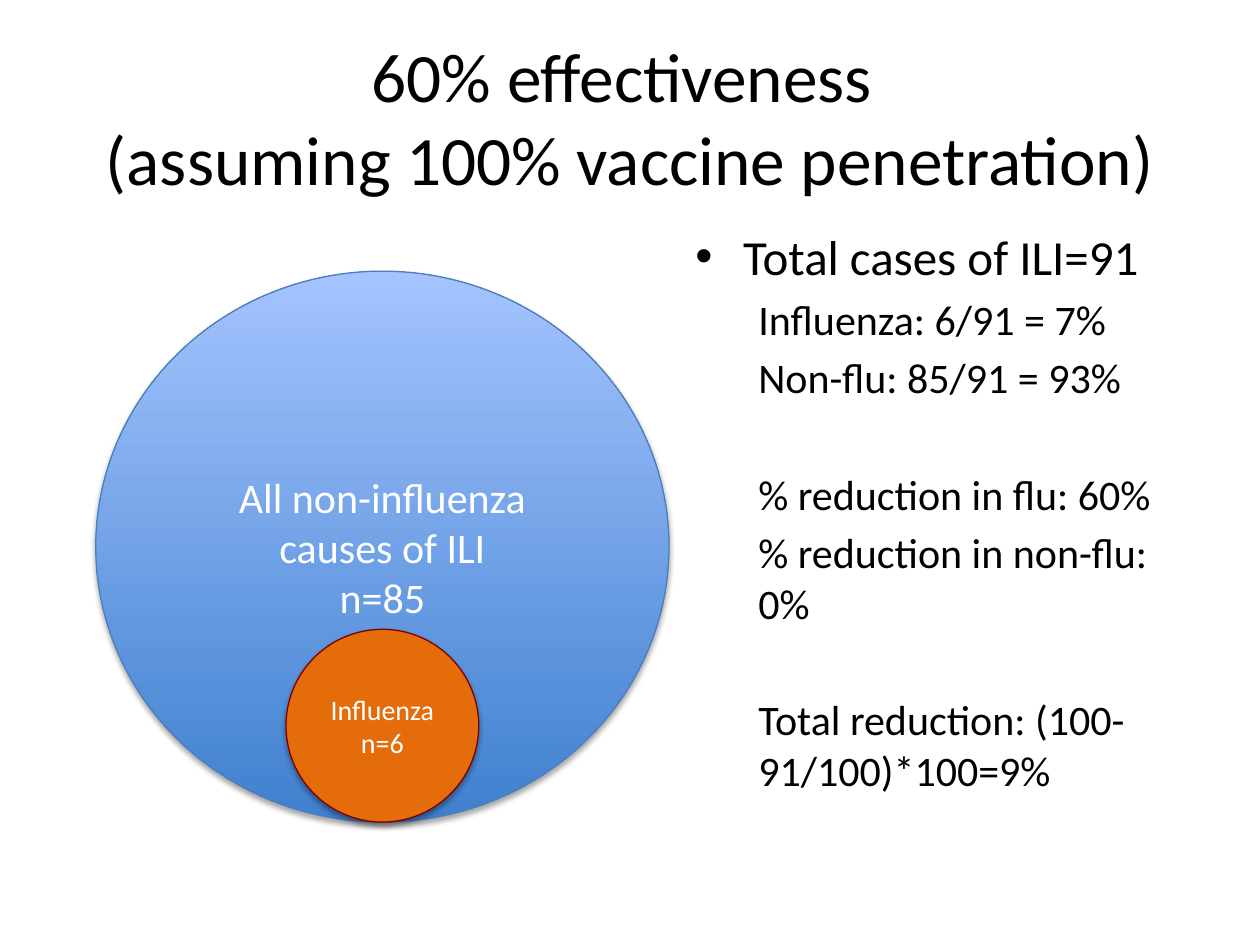
from lxml.etree import SubElement
from pptx import Presentation
from pptx.dml.color import RGBColor
from pptx.enum.shapes import MSO_SHAPE
from pptx.enum.text import MSO_ANCHOR, PP_ALIGN
from pptx.oxml.ns import qn
from pptx.util import Inches, Pt

BLACK = RGBColor(0x00, 0x00, 0x00)
WHITE = RGBColor(0xFF, 0xFF, 0xFF)
BLUE_DARK = RGBColor(0x3F, 0x80, 0xCE)
BLUE_LIGHT = RGBColor(0xA4, 0xC4, 0xFF)
BLUE_LINE = RGBColor(0x4B, 0x7E, 0xBC)
ORANGE = RGBColor(0xE4, 0x6C, 0x0A)
MAROON = RGBColor(0x80, 0x00, 0x00)

LINE_GAP, GROUP_GAP = 4.5, 38
FINDINGS = [
    ("Influenza: 6/91 = 7%", LINE_GAP),
    ("Non-flu: 85/91 = 93%", LINE_GAP),
    ("% reduction in flu: 60%", GROUP_GAP),
    ("% reduction in non-flu: 0%", LINE_GAP),
    ("Total reduction: (100-91/100)*100=9%", GROUP_GAP),
]


class SlideBuilder:
    """Holds the style and the slide; boxes are (left, top, width, height) shares of its size."""

    font_name = "Calibri"

    def __init__(self, presentation):
        self.width, self.height = presentation.slide_width, presentation.slide_height
        self.slide = presentation.slides.add_slide(presentation.slide_layouts[6])

    def place(self, box):
        left, top, width, height = box
        return [int(share * size) for share, size in
                ((left, self.width), (top, self.height), (width, self.width), (height, self.height))]

    def format_runs(self, paragraph, size, color):
        for run in paragraph.runs:
            run.font.name = self.font_name
            run.font.size = Pt(size)
            run.font.color.rgb = color

    def centre_text(self, shape, text, size, color):
        text_frame = shape.text_frame
        text_frame.word_wrap = True
        text_frame.vertical_anchor = MSO_ANCHOR.MIDDLE
        text_frame.text = text
        for paragraph in text_frame.paragraphs:
            paragraph.alignment = PP_ALIGN.CENTER
            self.format_runs(paragraph, size, color)

    def title(self, text, box):
        shape = self.slide.shapes.add_textbox(*self.place(box))
        self.centre_text(shape, text, 39.6, BLACK)

    def findings(self, heading, lines, box):
        """Adds a bulleted heading with indented lines, each given with its space before."""
        text_frame = self.slide.shapes.add_textbox(*self.place(box)).text_frame
        text_frame.word_wrap = True
        paragraph = text_frame.paragraphs[0]
        paragraph.text = heading
        paragraph.space_before = Pt(5)
        self.format_runs(paragraph, 28, BLACK)
        self.indent(paragraph, 0.38, -0.38)
        properties = paragraph._p.get_or_add_pPr()
        SubElement(properties, qn("a:buFont"), typeface="Arial")
        SubElement(properties, qn("a:buChar"), char="•")
        for text, gap in lines:
            paragraph = text_frame.add_paragraph()
            paragraph.text = text
            paragraph.level = 1
            paragraph.space_before = Pt(gap)
            self.indent(paragraph, 0.5, 0)
            self.format_runs(paragraph, 24, BLACK)

    def indent(self, paragraph, margin, first_line):
        properties = paragraph._p.get_or_add_pPr()
        properties.set("marL", str(Inches(margin)))
        properties.set("indent", str(Inches(first_line)))

    def circle(self, text, box, size, colors, line_color):
        """One colour gives a solid fill, two give a gradient from bottom to top."""
        shape = self.slide.shapes.add_shape(MSO_SHAPE.OVAL, *self.place(box))
        if len(colors) == 1:
            shape.fill.solid()
            shape.fill.fore_color.rgb = colors[0]
        else:
            shape.fill.gradient()
            shape.fill.gradient_angle = 90
            for stop, color in zip(shape.fill.gradient_stops, colors):
                stop.color.rgb = color
        shape.line.color.rgb = line_color
        shape.line.width = Pt(0.75)
        self.soft_shadow(shape)
        self.centre_text(shape, text, size, WHITE)

    def soft_shadow(self, shape):
        shape.shadow.inherit = False
        effects = shape.element.spPr.find(qn("a:effectLst"))
        shadow = SubElement(effects, qn("a:outerShdw"), blurRad=str(Pt(3.1)), dist=str(Pt(1.8)),
                            dir="5400000", rotWithShape="0")
        color = SubElement(shadow, qn("a:srgbClr"), val="000000")
        SubElement(color, qn("a:alpha"), val="35000")


def main():
    presentation = Presentation()
    presentation.slide_width, presentation.slide_height = Inches(10), Inches(7.5)
    builder = SlideBuilder(presentation)
    builder.title("60% effectiveness \v(assuming 100% vaccine penetration)",
                  (0.05, 0.04, 0.9, 1 / 6))
    builder.findings("Total cases of ILI=91", FINDINGS, (0.542, 0.233, 0.408, 0.66))
    builder.circle("All non-influenza causes of ILI\nn=85", (0.076, 0.287, 0.455, 0.583),
                   24, [BLUE_DARK, BLUE_LIGHT], BLUE_LINE)
    builder.circle("Influenza\nn=6", (0.227, 0.666, 0.153, 0.204), 16, [ORANGE], MAROON)
    presentation.save("out.pptx")


if __name__ == "__main__":
    main()
